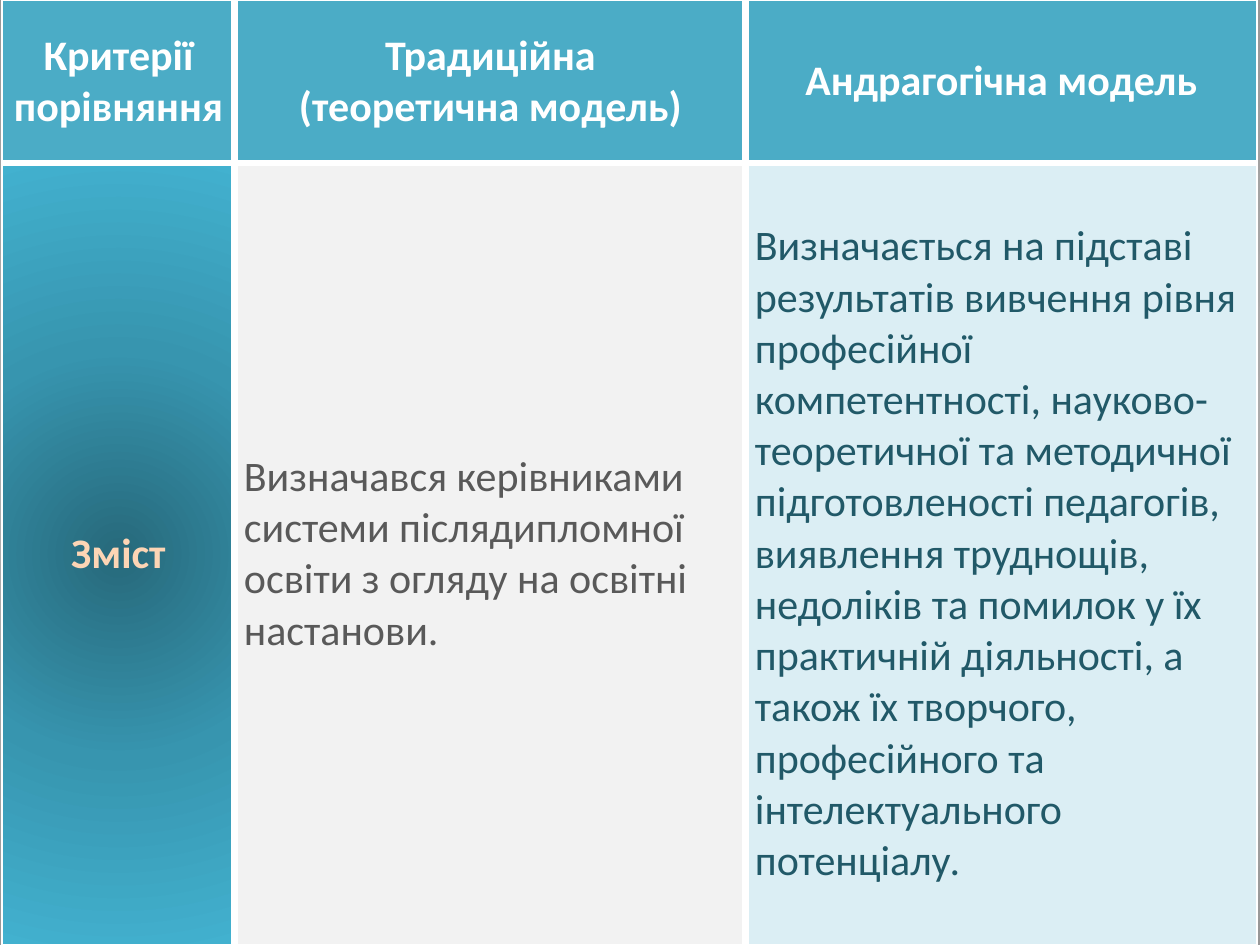
"""Builds a slide with a table comparing two models of teacher training."""
from lxml.etree import SubElement
from pptx import Presentation
from pptx.dml.color import RGBColor
from pptx.enum.text import MSO_ANCHOR, PP_ALIGN
from pptx.oxml.ns import qn
from pptx.util import Emu, Pt

COLORS = {
    "white": "FFFFFF", "gray": "979797", "header": "4BACC6",
    "dark": "27697B", "mid": "3795AF", "light": "42B1CF", "peach": "FCD5B5",
    "pale_gray": "F2F2F2", "text_gray": "595959",
    "pale_blue": "DBEEF4", "text_blue": "215968",
}


def px(n):
    return Emu(round(n * 914400 / 126))


def set_fill(fill, parent, names):
    fill.solid()
    fill.fore_color.rgb = RGBColor.from_string(COLORS[names[0]])
    if len(names) == 1:
        return
    solid = parent.find(qn("a:solidFill"))
    grad = SubElement(parent, qn("a:gradFill"), rotWithShape="1")
    parent.replace(solid, grad)
    stops = SubElement(grad, qn("a:gsLst"))
    for i, name in enumerate(names):
        gs = SubElement(stops, qn("a:gs"), pos=str(i * 100000 // (len(names) - 1)))
        SubElement(gs, qn("a:srgbClr"), val=COLORS[name])
    circle = SubElement(grad, qn("a:path"), path="circle")
    SubElement(circle, qn("a:fillToRect"), {side: "50000" for side in "ltrb"})


prs = Presentation()
prs.slide_width, prs.slide_height = px(1260), px(945)
s = prs.slides.add_slide(prs.slide_layouts[6])
bg = s.background.fill
bg.solid()
set_fill(bg, s.element.find(".//" + qn("p:bgPr")), ["white", "gray"])

head = {"fill": ["header"], "color": "white", "bold": True, "align": PP_ALIGN.CENTER}
topic = {**head, "fill": ["dark", "mid", "light"], "color": "peach"}
body = {"bold": False, "align": PP_ALIGN.LEFT}
rows = [
    [
        ("Критерії порівняння", head),
        ("Традиційна\n(теоретична модель)", head),
        ("Андрагогічна модель", head),
    ],
    [
        ("Зміст", topic),
        ("Визначався керівниками системи післядипломної освіти з огляду на "
         "освітні настанови.",
         {**body, "fill": ["pale_gray"], "color": "text_gray"}),
        ("Визначається на підставі результатів вивчення рівня професійної "
         "компетентності, науково-теоретичної та методичної підготовленості "
         "педагогів, виявлення труднощів, недоліків та помилок у їх практичній "
         "діяльності, а також їх творчого, професійного та інтелектуального "
         "потенціалу.",
         {**body, "fill": ["pale_blue"], "color": "text_blue"}),
    ],
]
widths, heights = [233, 511, 511], [163, 782]
table = s.shapes.add_table(
    len(heights), len(widths), px(2), px(0), px(sum(widths)), px(sum(heights))
).table
table.first_row = table.horz_banding = False
for col, w in zip(table.columns, widths):
    col.width = px(w)
for row, h in zip(table.rows, heights):
    row.height = px(h)

margins = {"margin_left": px(9), "margin_right": px(9), "margin_top": 0,
           "margin_bottom": 0, "vertical_anchor": MSO_ANCHOR.MIDDLE}
for i, row in enumerate(rows):
    for j, (text, style) in enumerate(row):
        cell = table.cell(i, j)
        cell.text = text
        for name, value in margins.items():
            setattr(cell, name, value)
        for p in cell.text_frame.paragraphs:
            p.alignment = style["align"]
            font = p.runs[0].font
            for name, value in {"name": "Calibri", "size": Pt(24),
                                "bold": style["bold"]}.items():
                setattr(font, name, value)
            font.color.rgb = RGBColor.from_string(COLORS[style["color"]])
        tcPr = cell._tc.get_or_add_tcPr()
        outer = {"L": j == 0, "R": j == len(widths) - 1,
                 "T": i == 0, "B": i == len(heights) - 1}
        for side, edge in outer.items():
            ln = SubElement(tcPr, qn("a:ln" + side), w=str(Pt(1 if edge else 4.5)))
            line = SubElement(ln, qn("a:solidFill"))
            SubElement(line, qn("a:srgbClr"), val=COLORS["white"])
        set_fill(cell.fill, tcPr, style["fill"])

prs.save("out.pptx")
